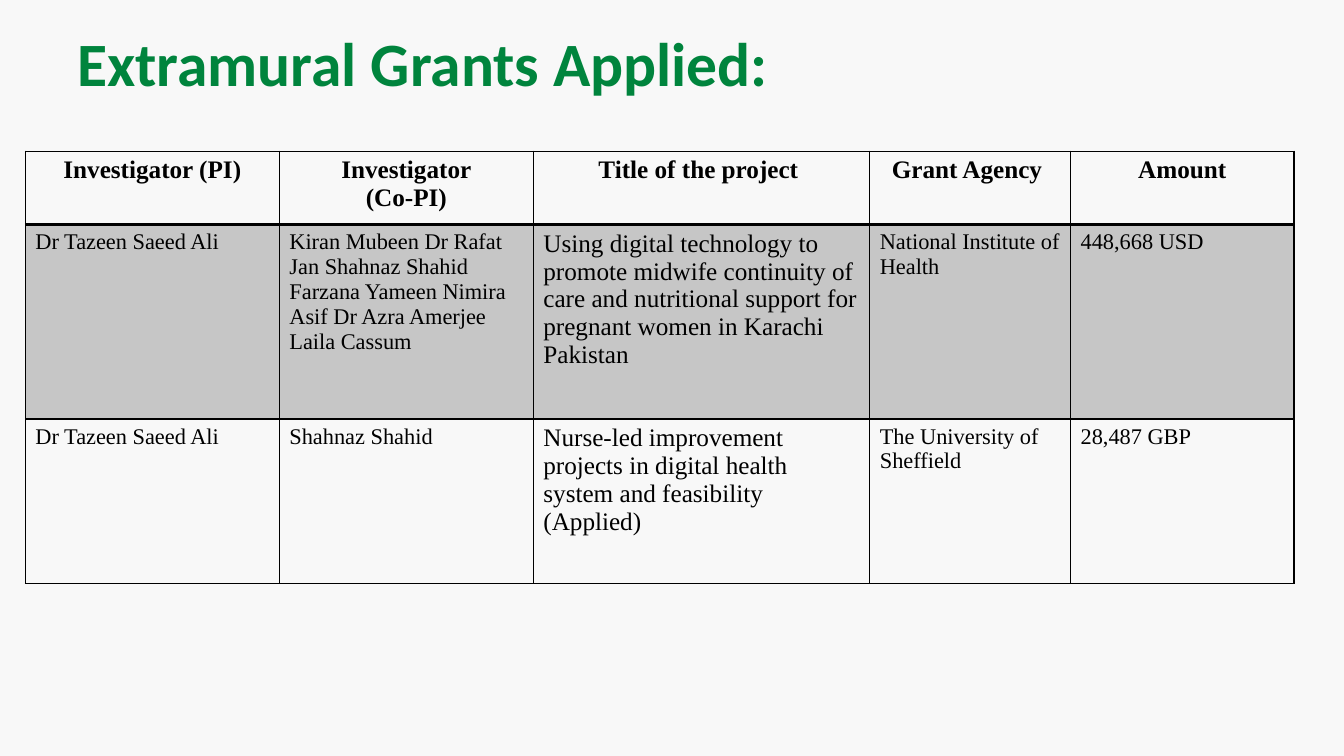
from lxml.etree import SubElement
from pptx import Presentation
from pptx.dml.color import RGBColor
from pptx.enum.text import MSO_ANCHOR, PP_ALIGN
from pptx.oxml.ns import qn
from pptx.util import Cm, Pt

GREEN = RGBColor(0x00, 0x84, 0x3D)
BLACK = RGBColor(0x00, 0x00, 0x00)
PALE = RGBColor(0xF8, 0xF8, 0xF8)

WIDTHS = [6.4, 6.4, 8.48, 5.06, 5.63]
HEIGHTS = [1.85, 4.9, 4.14]
WIDE_COL = 2
ROWS = [
    ["Investigator (PI)", "Investigator\n(Co-PI)", "Title of the project ",
     "Grant Agency ", "Amount"],
    ["Dr Tazeen Saeed Ali",
     "Kiran Mubeen Dr Rafat Jan Shahnaz Shahid Farzana Yameen Nimira Asif "
     "Dr Azra Amerjee Laila Cassum",
     "Using digital technology to promote midwife continuity of care and "
     "nutritional support for pregnant women in Karachi Pakistan",
     "National Institute of Health", "448,668 USD"],
    ["Dr Tazeen Saeed Ali", "Shahnaz Shahid",
     "Nurse-led improvement projects in digital health system and "
     "feasibility (Applied)",
     "The University of Sheffield", "28,487 GBP"],
]


def style(para, name, size, color, bold):
    font = para.font
    font.name, font.size, font.bold = name, Pt(size), bold
    font.color.rgb = color


def add_title(slide, left, top, width, height):
    frame = slide.shapes.add_textbox(
        Cm(left), Cm(top), Cm(width), Cm(height)).text_frame
    frame.word_wrap = True
    frame.vertical_anchor = MSO_ANCHOR.MIDDLE
    frame.text = "Extramural Grants Applied:"
    style(frame.paragraphs[0], "Calibri", 44, GREEN, True)


def add_edges(cell, tops, bottoms):
    """Draw the four borders; must come before the cell's fill."""
    props = cell._tc.get_or_add_tcPr()
    for side, width in (("L", 1), ("R", 1), ("T", tops), ("B", bottoms)):
        line = SubElement(props, qn("a:ln" + side), w=str(Pt(width)))
        fill = SubElement(line, qn("a:solidFill"))
        SubElement(fill, qn("a:srgbClr"), val=str(BLACK))


def shade(cell, share):
    cell.fill.solid()
    cell.fill.fore_color.rgb = BLACK
    color = cell._tc.tcPr.find(qn("a:solidFill")).find(qn("a:srgbClr"))
    SubElement(color, qn("a:alpha"), val=str(share * 1000))


def add_grants(slide, left, top):
    table = slide.shapes.add_table(
        len(ROWS), len(WIDTHS), Cm(left), Cm(top),
        Cm(sum(WIDTHS)), Cm(sum(HEIGHTS))).table
    table.first_row = table.horz_banding = False
    for col, width in zip(table.columns, WIDTHS):
        col.width = Cm(width)
    for r, texts in enumerate(ROWS):
        table.rows[r].height = Cm(HEIGHTS[r])
        head = r == 0
        for c, text in enumerate(texts):
            cell = table.cell(r, c)
            cell.text = text
            for para in cell.text_frame.paragraphs:
                size = 18 if head or c == WIDE_COL else 16
                style(para, "Times New Roman", size, BLACK, head)
                para.alignment = PP_ALIGN.CENTER if head else PP_ALIGN.LEFT
            add_edges(cell, 2 if r == 1 else 1, 2 if head else 1)
            if r % 2:
                shade(cell, 20)
            else:
                cell.fill.background()


def main():
    deck = Presentation()
    deck.slide_width, deck.slide_height = Cm(33.87), Cm(19.05)
    slide = deck.slides.add_slide(deck.slide_layouts[6])
    slide.background.fill.solid()
    slide.background.fill.fore_color.rgb = PALE
    add_title(slide, 1.7, 0.2, 30.48, 2.74)
    add_grants(slide, 0.64, 3.81)
    deck.save("out.pptx")


if __name__ == "__main__":
    main()
